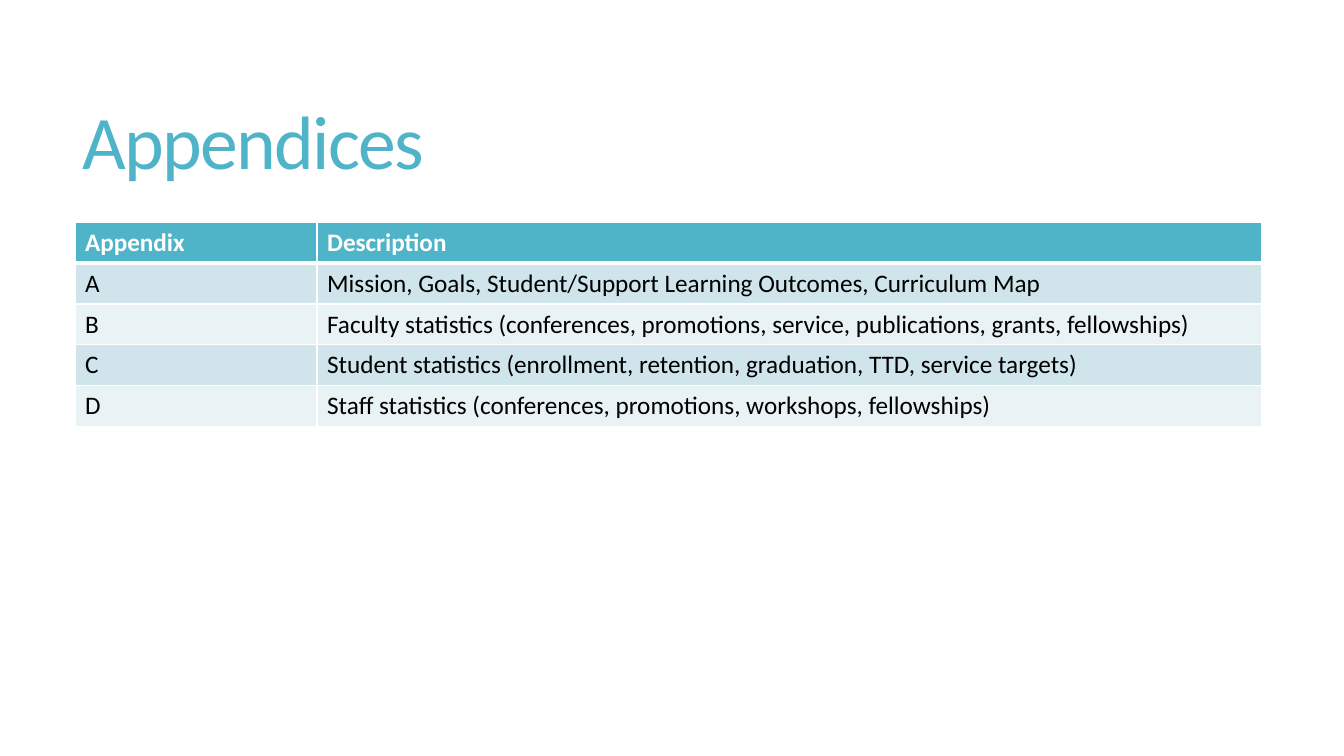
from lxml.etree import SubElement
from pptx import Presentation
from pptx.dml.color import RGBColor
from pptx.enum.text import MSO_ANCHOR as Anchor, PP_ALIGN as Align
from pptx.oxml.ns import qn
from pptx.util import Cm, Pt

FONT = "Calibri"
TEAL, WHITE, BLACK = "50B4C8", "FFFFFF", "000000"
BANDS = ["D0E5EB", "E9F2F5"]
COLUMN_WIDTHS = [6.1, 23.8]
ROW_HEIGHT = 1.03
ROWS = [
    ("Appendix", "Description"),
    ("A", "Mission, Goals, Student/Support Learning Outcomes, Curriculum Map"),
    ("B", "Faculty statistics (conferences, promotions, service, publications, grants, fellowships)"),
    ("C", "Student statistics (enrollment, retention, graduation, TTD, service targets)"),
    ("D", "Staff statistics (conferences, promotions, workshops, fellowships)"),
]


def color(value):
    return RGBColor.from_string(value)


def add_run(paragraph, text, size, text_color, bold=False):
    run = paragraph.add_run()
    run.text = text
    run.font.name = FONT
    run.font.size = Pt(size)
    run.font.bold = bold
    run.font.color.rgb = color(text_color)
    return run


def set_title(slide, text):
    title = slide.shapes.title
    title.left, title.top, title.width, title.height = Cm(1.83), Cm(1.4), Cm(29.92), Cm(4.6)
    frame = title.text_frame
    frame.word_wrap = True
    frame.vertical_anchor = Anchor.MIDDLE
    paragraph = frame.paragraphs[0]
    paragraph.alignment = Align.LEFT
    paragraph.line_spacing = 0.85
    run = add_run(paragraph, text, 54, TEAL)
    # Tighten the letter spacing, in hundredths of a point
    run.font._element.set("spc", "-120")


def add_border(cell, side, width):
    properties = cell._tc.get_or_add_tcPr()
    line = SubElement(properties, qn(f"a:ln{side}"), w=str(Pt(width)))
    fill = SubElement(line, qn("a:solidFill"))
    SubElement(fill, qn("a:srgbClr"), val=WHITE)


def format_cell(cell, text, row_index):
    is_header = row_index == 0
    # Borders, with a thick rule under the header
    widths = {"L": 1, "R": 1, "T": 3 if row_index == 1 else 1, "B": 3 if is_header else 1}
    for side, width in widths.items():
        add_border(cell, side, width)
    # Header or banded fill
    cell.fill.solid()
    cell.fill.fore_color.rgb = color(TEAL if is_header else BANDS[(row_index - 1) % 2])
    add_run(cell.text_frame.paragraphs[0], text, 18, WHITE if is_header else BLACK, is_header)


def add_appendix_table(slide):
    frame = slide.shapes.add_table(
        len(ROWS), len(COLUMN_WIDTHS), Cm(1.89), Cm(5.6),
        Cm(sum(COLUMN_WIDTHS)), Cm(ROW_HEIGHT * len(ROWS)))
    table = frame.table
    for column, width in zip(table.columns, COLUMN_WIDTHS):
        column.width = Cm(width)
    for row_index, texts in enumerate(ROWS):
        table.rows[row_index].height = Cm(ROW_HEIGHT)
        for column_index, text in enumerate(texts):
            format_cell(table.cell(row_index, column_index), text, row_index)


def main():
    presentation = Presentation()
    presentation.slide_width, presentation.slide_height = Cm(33.87), Cm(19.05)
    slide = presentation.slides.add_slide(presentation.slide_layouts[5])
    set_title(slide, "Appendices")
    add_appendix_table(slide)
    presentation.save("out.pptx")


if __name__ == "__main__":
    main()
